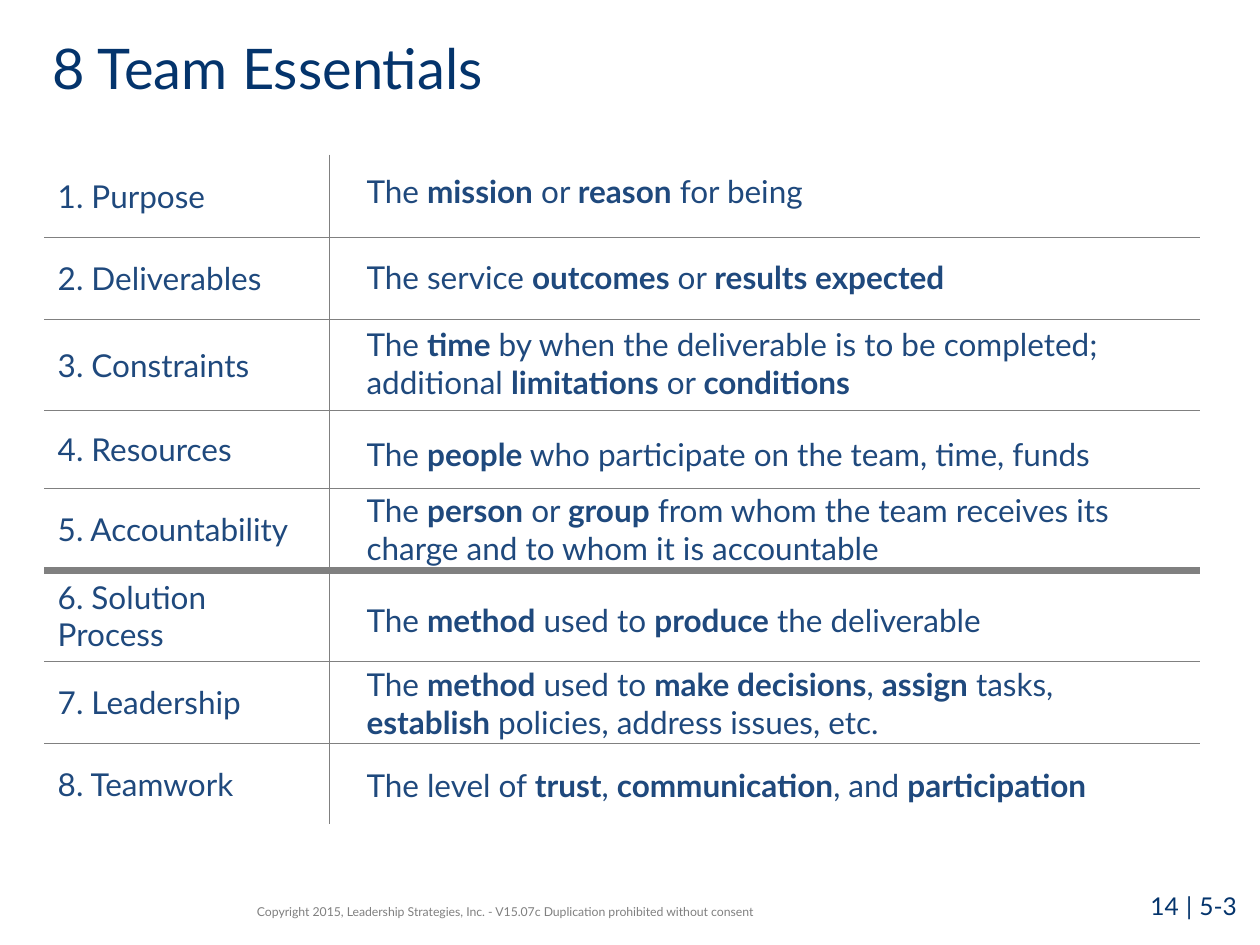
from dataclasses import dataclass

from lxml.etree import SubElement
from pptx import Presentation
from pptx.dml.color import RGBColor
from pptx.enum.text import MSO_ANCHOR, MSO_AUTO_SIZE, PP_ALIGN
from pptx.oxml.ns import qn
from pptx.util import Cm, Pt

MIDDLE = MSO_ANCHOR.MIDDLE
TOP = MSO_ANCHOR.TOP
LEFT = PP_ALIGN.LEFT
CENTER = PP_ALIGN.CENTER
GROW = MSO_AUTO_SIZE.SHAPE_TO_FIT_TEXT
FIXED = MSO_AUTO_SIZE.NONE
TITLE_ONLY = 5


@dataclass(frozen=True)
class Theme:
    face: str = "Lato"
    spacer_face: str = "Calibri"
    title_color: str = "04346C"
    body_color: str = "1F497D"
    rule_color: str = "808080"
    spacer_color: str = "000000"
    title_size: float = 32
    body_size: float = 18
    page_size: float = 14
    footer_size: float = 7
    thin_rule: float = 0.5
    thick_rule: float = 4.5


@dataclass(frozen=True)
class Place:
    left: float
    top: float
    width: float
    height: float

    def lengths(self) -> dict:
        return {name: Cm(getattr(self, name)) for name in ("left", "top", "width", "height")}


@dataclass(frozen=True)
class Essential:
    name: str
    meaning: str
    row_height: float
    note_top: float
    lines: int = 1


THEME = Theme()
TITLE = {"name": THEME.face, "size": Pt(THEME.title_size), "color": THEME.title_color, "bold": False}
BODY = {"name": THEME.face, "size": Pt(THEME.body_size), "color": THEME.body_color, "bold": False}
STRONG = {**BODY, "bold": True}
FOOTER = {"name": THEME.face, "size": Pt(THEME.footer_size), "color": THEME.rule_color}
PAGE = {"name": THEME.face, "size": Pt(THEME.page_size), "color": THEME.title_color}
SPACER = {"name": THEME.spacer_face, "size": Pt(THEME.body_size), "color": THEME.spacer_color}

COLUMN_WIDTHS = (5.74, 17.52)
TABLE_LEFT, TABLE_TOP = 0.91, 3.13
NOTE_LEFT, NOTE_WIDTH = 7.14, 16.59
NOTE_HEIGHTS = {1: 1.02, 2: 1.8}
LAST_OF_FIRST_GROUP = 5

ESSENTIALS = (
    Essential("Purpose", "The *mission* or *reason* for being", 1.65, 3.35),
    Essential("Deliverables", "The service *outcomes* or *results expected*", 1.65, 5.08),
    Essential("Constraints", "The *time* by when the deliverable is to be completed; "
              "additional *limitations* or *conditions*", 1.85, 6.43, 2),
    Essential("Resources", "The *people* who participate on the team, time, funds", 1.57, 8.64),
    Essential("Accountability", "The *person* or *group* from whom the team receives its "
              "charge and to whom it is accountable", 1.65, 9.78, 2),
    Essential("Solution Process", "The *method* used to *produce* the deliverable", 1.83, 11.99),
    Essential("Leadership", "The *method* used to *make decisions*, *assign* tasks, "
              "*establish* policies, address issues, etc.", 1.65, 13.28, 2),
    Essential("Teamwork", "The level of *trust*, *communication*, and *participation*", 1.65, 15.32),
)


def apply(target, values: dict) -> None:
    for name, value in values.items():
        setattr(target, name, value)


def add_span(para, text: str, style: dict) -> None:
    span = para.add_run()
    span.text = text
    apply(span.font, {name: value for name, value in style.items() if name != "color"})
    span.font.color.rgb = RGBColor.from_string(style["color"])


def add_box(slide, place: Place, spans: list, anchor=TOP, align=LEFT, fit=FIXED) -> None:
    box = slide.shapes.add_textbox(**place.lengths())
    apply(box.text_frame, {"word_wrap": True, "auto_size": fit, "vertical_anchor": anchor})
    para = box.text_frame.paragraphs[0]
    para.alignment = align
    for text, style in spans:
        add_span(para, text, style)


def marked_spans(text: str) -> list:
    pieces = text.split("*")
    return [(piece, STRONG if index % 2 else BODY) for index, piece in enumerate(pieces) if piece]


def add_border(cell, side: str, weight: float) -> None:
    line = SubElement(cell._tc.get_or_add_tcPr(), qn(f"a:ln{side}"), w=str(int(Pt(weight))))
    fill = SubElement(line, qn("a:solidFill"))
    SubElement(fill, qn("a:srgbClr"), val=THEME.rule_color)


def rule_weight(row_number: int) -> float:
    return THEME.thick_rule if row_number == LAST_OF_FIRST_GROUP else THEME.thin_rule


def add_essentials_table(slide) -> None:
    heights = [essential.row_height for essential in ESSENTIALS]
    place = Place(TABLE_LEFT, TABLE_TOP, sum(COLUMN_WIDTHS), sum(heights))
    table = slide.shapes.add_table(len(ESSENTIALS), len(COLUMN_WIDTHS), **place.lengths()).table
    apply(table, {"first_row": False, "horz_banding": False})
    for column, width in zip(table.columns, COLUMN_WIDTHS):
        column.width = Cm(width)
    for number, (row, essential) in enumerate(zip(table.rows, ESSENTIALS), start=1):
        row.height = Cm(essential.row_height)
        for cell, inner_side in zip(row.cells, "RL"):
            add_border(cell, inner_side, THEME.thin_rule)
            if number > 1:
                add_border(cell, "T", rule_weight(number - 1))
            if number < len(ESSENTIALS):
                add_border(cell, "B", rule_weight(number))
            cell.fill.background()
            cell.vertical_anchor = MIDDLE
        add_span(row.cells[0].text_frame.paragraphs[0], f"{number}. {essential.name}", BODY)


def add_title(slide, text: str, place: Place) -> None:
    title = slide.shapes.title
    apply(title, place.lengths())
    apply(title.text_frame, {"word_wrap": True, "auto_size": FIXED, "vertical_anchor": MIDDLE})
    para = title.text_frame.paragraphs[0]
    para.alignment = LEFT
    add_span(para, text, TITLE)


def main() -> None:
    deck = Presentation()
    apply(deck, {"slide_width": Cm(25.4), "slide_height": Cm(19.05)})
    slide = deck.slides.add_slide(deck.slide_layouts[TITLE_ONLY])
    add_title(slide, "8 Team Essentials", Place(0.81, 0, 18.95, 2.69))
    add_essentials_table(slide)
    for essential in ESSENTIALS:
        place = Place(NOTE_LEFT, essential.note_top, NOTE_WIDTH, NOTE_HEIGHTS[essential.lines])
        add_box(slide, place, marked_spans(essential.meaning), fit=GROW)
    copyright_line = ("Copyright 2015, Leadership Strategies, Inc. - V15.07c "
                      "Duplication prohibited without consent")
    add_box(slide, Place(4.93, 17.98, 11.79, 0.79), [(copyright_line, FOOTER)], anchor=MIDDLE)
    page_spans = [("14", PAGE), (" ", SPACER), ("|", PAGE), (" ", SPACER), ("5-3", PAGE)]
    add_box(slide, Place(22.73, 17.7, 2.67, 1.35), page_spans, align=CENTER)
    deck.save("out.pptx")


if __name__ == "__main__":
    main()
